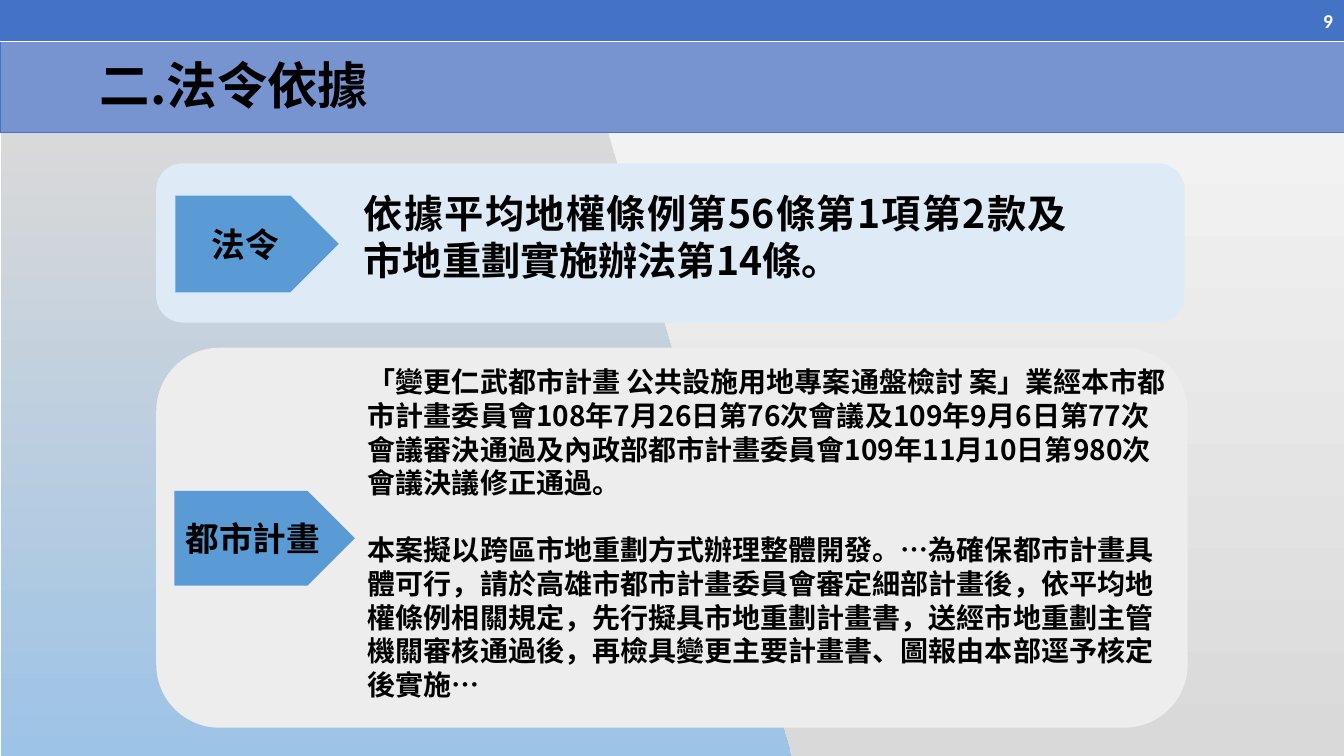
from lxml import etree
from pptx import Presentation
from pptx.dml.color import RGBColor
from pptx.enum.shapes import MSO_SHAPE
from pptx.enum.text import MSO_ANCHOR, MSO_AUTO_SIZE, PP_ALIGN
from pptx.oxml.ns import qn
from pptx.util import Inches, Pt

LEFT, MID, RIGHT, JUST = PP_ALIGN.LEFT, PP_ALIGN.CENTER, PP_ALIGN.RIGHT, PP_ALIGN.JUSTIFY
TOP, CENTER = MSO_ANCHOR.TOP, MSO_ANCHOR.MIDDLE
ROUND, ARROW, RECT = MSO_SHAPE.ROUNDED_RECTANGLE, MSO_SHAPE.PENTAGON, MSO_SHAPE.RECTANGLE
WIDE, HIGH = 13.33, 7.5
FONT = "Noto Sans CJK SC"
COLORS = {
    "bar": "4472C4", "band": "7894D0", "white": "FFFFFF", "black": "000000",
    "gray": "D9D9D9", "pale": "F2F2F2", "sky": "9DC3E6", "tag": "5B9BD5",
    "law": "DEEBF7", "plan": "EDEDED",
}
PLAN = [
    "「變更仁武都市計畫 公共設施用地專案通盤檢討 案」業經本市都市計畫委員會108年7月26日第76次會議"
    "及109年9月6日第77次會議審決通過及內政部都市計畫委員會109年11月10日第980次會議決議修正通過。",
    "本案擬以跨區市地重劃方式辦理整體開發。…為確保都市計畫具體可行，請於高雄市都市計畫委員會審定細部計畫後，"
    "依平均地權條例相關規定，先行擬具市地重劃計畫書，送經市地重劃主管機關審核通過後，"
    "再檢具變更主要計畫書、圖報由本部逕予核定後實施…",
]


def color(name):
    return RGBColor.from_string(COLORS[name])


def inches(box):
    return [Inches(n) for n in box]


def write(shape, *lines, size=20, tint="black", font=FONT, align=LEFT, anchor=TOP, gap=0):
    """Fill a shape with paragraphs, set apart by gap points."""
    frame = shape.text_frame
    frame.word_wrap = True
    frame.auto_size = MSO_AUTO_SIZE.NONE
    frame.vertical_anchor = anchor
    for i, line in enumerate(lines):
        para = frame.add_paragraph() if i else frame.paragraphs[0]
        para.alignment = align
        if i:
            para.space_before = Pt(gap)
        run = para.add_run()
        run.text = line
        run.font.size, run.font.bold, run.font.name = Pt(size), True, font
        run.font.color.rgb = color(tint)
        etree.SubElement(run._r.get_or_add_rPr(), qn("a:ea"), typeface=font)


def add_label(slide, box, *lines, **style):
    write(slide.shapes.add_textbox(*inches(box)), *lines, **style)


def add_block(slide, kind, box, fill):
    shape = slide.shapes.add_shape(kind, *inches(box))
    shape.shadow.inherit = False
    shape.line.fill.background()
    shape.fill.solid()
    shape.fill.fore_color.rgb = color(fill)
    return shape


def shade(shape, *names):
    """Blend two colours from top to bottom, with no outline."""
    shape.shadow.inherit = False
    shape.line.fill.background()
    shape.fill.gradient()
    shape.fill.gradient_angle = 270
    for i, (stop, name) in enumerate(zip(shape.fill.gradient_stops, names)):
        stop.position = i
        stop.color.rgb = color(name)


def add_backdrop(slide, box):
    x, y, w, h = box
    back = slide.shapes.add_shape(RECT, *inches((x + 5.09, y, w - 5.09, h)))
    shade(back, "pale", "gray")
    pen = slide.shapes.build_freeform(Inches(x + 0.01), Inches(y))
    points = [(x + 6.03, y), (x + 7.85, y + h), (x + 0.01, y + h)]
    pen.add_line_segments([inches(p) for p in points], close=True)
    shade(pen.convert_to_shape(), "gray", "sky")


def edge(cell, side, name, width):
    line = etree.SubElement(cell._tc.get_or_add_tcPr(), qn("a:" + side), w=str(Pt(width)))
    fill = etree.SubElement(line, qn("a:solidFill"))
    etree.SubElement(fill, qn("a:srgbClr"), val=COLORS[name])


def add_header(slide, box):
    x, y, w, h = box
    table = slide.shapes.add_table(2, 1, *inches(box)).table
    table.columns[0].width = Inches(w)
    rules = [("bar", "white"), ("white", "bar")]
    for i, (tall, fill) in enumerate([(0.41, "bar"), (h - 0.41, "band")]):
        table.rows[i].height = Inches(tall)
        cell = table.cell(i, 0)
        for side, name in zip(("lnL", "lnR", "lnT", "lnB"), ("bar", "bar", *rules[i])):
            edge(cell, side, name, 1 if name == "white" else 0.5)
        cell.fill.solid()
        cell.fill.fore_color.rgb = color(fill)
    title = slide.shapes.title
    title.left, title.top, title.width, title.height = inches((x + 0.89, y + 0.49, 6.17, 0.71))
    slide.shapes._spTree.append(title._element)
    write(title, "二.法令依據", size=36)
    add_label(slide, (x + w - 0.56, y + 0.01, 0.55, 0.4), "9", size=14, tint="white",
              font="Calibri", align=RIGHT, anchor=CENTER)


def add_panel(slide, box, fill, tag, tagbox, textbox, lines, **style):
    """Draw a rounded panel; tagbox and textbox are offset from its corner."""
    x, y = box[:2]
    add_block(slide, ROUND, box, fill)
    dx, dy, w, h = tagbox
    arrow = add_block(slide, ARROW, (x + dx, y + dy, w, h), "tag")
    write(arrow, tag, size=24, align=MID, anchor=CENTER)
    dx, dy, w, h = textbox
    add_label(slide, (x + dx, y + dy, w, h), *lines, **style)


def main():
    deck = Presentation()
    deck.slide_width, deck.slide_height = Inches(WIDE), Inches(HIGH)
    slide = deck.slides.add_slide(deck.slide_layouts[5])
    add_backdrop(slide, (0, 1.31, WIDE, HIGH - 1.31))
    add_header(slide, (0, 0, WIDE, 1.31))
    add_panel(slide, (1.55, 3.45, 10.23, 3.77), "plan", "都市計畫", (0.18, 1.42, 1.79, 0.94),
              (2, 0.12, 8.17, 3.47), PLAN, size=20, gap=24)
    add_panel(slide, (1.55, 1.62, 10.2, 1.58), "law", "法令", (0.19, 0.32, 1.62, 0.96),
              (1.96, 0.21, 7.17, 1.04),
              ["依據平均地權條例第56條第1項第2款及市地重劃實施辦法第14條。"], size=28, align=JUST)
    deck.save("out.pptx")


if __name__ == "__main__":
    main()
